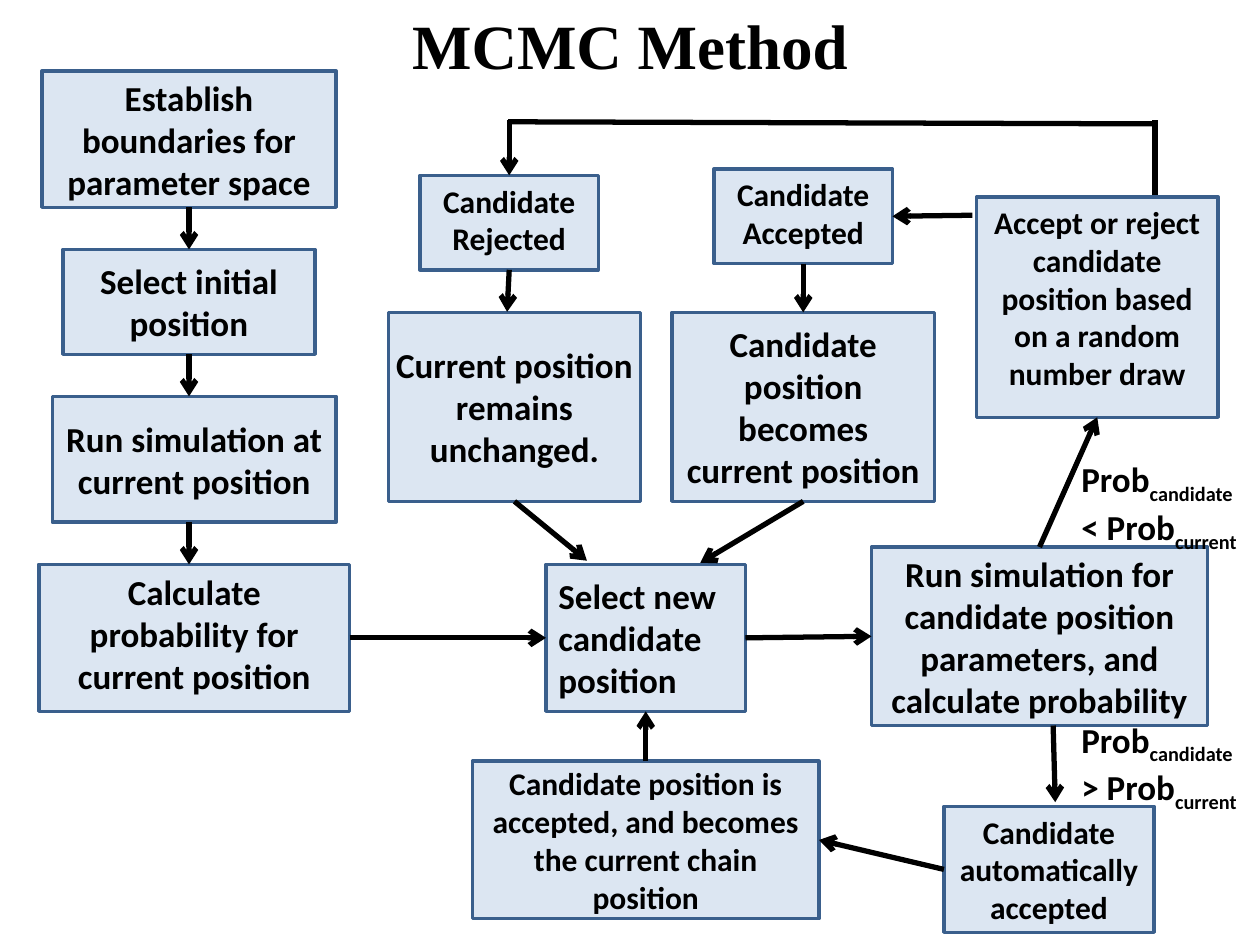
"""Builds the MCMC method flowchart slide on a grid of 120 columns by 90 rows."""
from pptx import Presentation
from pptx.dml.color import RGBColor
from pptx.enum.shapes import MSO_CONNECTOR as Line, MSO_SHAPE as Shape
from pptx.enum.text import MSO_ANCHOR as Anchor, MSO_AUTO_SIZE as AutoSize, PP_ALIGN as Align
from pptx.oxml.ns import qn
from pptx.util import Inches, Pt
from lxml.etree import SubElement

TOP, LEFT, BOTTOM, RIGHT = range(4)


def color(value):
    return RGBColor.from_string(value)


class Flowchart:
    fill, border, ink = "DCE6F2", "3A5F8C", "000000"
    body_font, title_font = "Calibri", "Times New Roman"

    def __init__(self, deck):
        self.slide = deck.slides.add_slide(deck.slide_layouts[5])
        self.column = deck.slide_width / 120
        self.row = deck.slide_height / 90

    def place(self, columns, rows):
        return round(columns * self.column), round(rows * self.row)

    def span(self, para, text, size, font=None, baseline=None):
        span = para.add_run()
        span.text = text
        span.font.name = font or self.body_font
        span.font.size = Pt(size)
        span.font.bold = True
        span.font.color.rgb = color(self.ink)
        if baseline is not None:
            span.font._element.set("baseline", str(baseline))

    def title(self, text, area):
        box = self.slide.shapes.title
        box.left, box.top = self.place(*area[:2])
        box.width, box.height = self.place(*area[2:])
        frame = box.text_frame
        frame.vertical_anchor = Anchor.TOP
        frame.auto_size = AutoSize.NONE
        para = frame.paragraphs[0]
        para.alignment = Align.CENTER
        self.span(para, text, 36, self.title_font)

    def step(self, text, area, size=20, anchor=Anchor.MIDDLE, align=Align.CENTER, inset=None):
        box = self.slide.shapes.add_shape(Shape.RECTANGLE, *self.place(*area[:2]), *self.place(*area[2:]))
        box.shadow.inherit = False
        box.fill.solid()
        box.fill.fore_color.rgb = color(self.fill)
        box.line.color.rgb = color(self.border)
        box.line.width = Pt(2)
        frame = box.text_frame
        frame.word_wrap = True
        frame.vertical_anchor = anchor
        if inset is not None:
            frame.margin_left = frame.margin_right = Inches(inset)
            frame.margin_top = frame.margin_bottom = Inches(inset)
        para = frame.paragraphs[0]
        para.alignment = align
        self.span(para, text, size)
        return box

    def arrow(self, start, end, head=True):
        start_glued, end_glued = (not isinstance(point[0], (int, float)) for point in (start, end))
        begin = (0, 0) if start_glued else self.place(*start)
        finish = (0, 0) if end_glued else self.place(*end)
        link = self.slide.shapes.add_connector(Line.STRAIGHT, *begin, *finish)
        if start_glued:
            link.begin_connect(*start)
        if end_glued:
            link.end_connect(*end)
        link.line.color.rgb = color(self.ink)
        link.line.width = Pt(3)
        if head:
            SubElement(link.line._get_or_add_ln(), qn("a:tailEnd"), type="arrow")
        SubElement(link._element.spPr, qn("a:effectLst"))

    def condition(self, sign, area):
        box = self.slide.shapes.add_textbox(*self.place(*area[:2]), *self.place(*area[2:]))
        frame = box.text_frame
        frame.word_wrap = True
        lines = (("Prob", "candidate"), (f"{sign} Prob", "current"))
        for index, (base, subscript) in enumerate(lines):
            para = frame.add_paragraph() if index else frame.paragraphs[0]
            self.span(para, base, 20)
            self.span(para, subscript, 20, baseline=-25000)


def main():
    deck = Presentation()
    deck.slide_width, deck.slide_height = Inches(10), Inches(7.5)
    chart = Flowchart(deck)
    step, arrow = chart.step, chart.arrow
    chart.title("MCMC Method", (6, 0, 108, 8.5))

    bounds = step("Establish boundaries for parameter space", (4, 6.75, 28, 13))
    initial = step("Select initial position", (6, 23.75, 24, 10))
    step("Run simulation at current position", (5, 37.75, 27, 12))
    current = step("Calculate probability for current position", (3.7, 53.75, 29.6, 14), anchor=Anchor.TOP)
    select = step("Select new candidate position", (52, 53.75, 19, 14), align=Align.LEFT)
    simulate = step("Run simulation for candidate position parameters, and calculate probability",
                    (83, 52.1, 32, 17))
    draw = step("Accept or reject candidate position based on a random number draw",
                (93, 18.75, 23, 21), 18, Anchor.TOP)
    chain = step("Candidate position is accepted, and becomes the current chain position",
                 (45, 72.5, 33, 15), 18, inset=0.05)
    becomes = step("Candidate position becomes current position", (64, 29.75, 25, 18))
    unchanged = step("Current position remains unchanged.", (37, 29.75, 24, 18), inset=0)
    automatic = step("Candidate automatically accepted", (89.9, 76.8, 20, 12), 18, Anchor.TOP)
    accepted = step("Candidate Accepted", (68, 16.1, 17, 9), 18, Anchor.TOP)
    rejected = step("Candidate Rejected", (40, 16.7, 17, 9), 18, Anchor.TOP)

    arrow((bounds, BOTTOM), (initial, TOP))
    arrow((initial, BOTTOM), (18, 37.75))
    arrow((18, 49.75), (18, 53.75))
    arrow((current, RIGHT), (select, LEFT))
    arrow((select, RIGHT), (simulate, LEFT))
    arrow((simulate, TOP), (draw, BOTTOM))
    arrow((110, 18.6), (110, 11.4), head=False)
    arrow((110, 11.8), (48.4, 11.6), head=False)
    arrow((48.5, 11.4), (rejected, TOP))
    arrow((92.6, 20.5), (accepted, RIGHT))
    arrow((rejected, BOTTOM), (48.3, 29.7))
    arrow((accepted, BOTTOM), (becomes, TOP))
    arrow((unchanged, BOTTOM), (55.9, 53.4))
    arrow((becomes, BOTTOM), (66.7, 53.6))
    arrow((100.3, 69.1), (100.5, 76.4))
    arrow((automatic, LEFT), (chain, RIGHT))
    arrow((chain, TOP), (select, BOTTOM))

    for sign, top in (("<", 43), (">", 67.8)):
        chart.condition(sign, (101.8, top, 18.2, 9.2))
    deck.save("out.pptx")


if __name__ == "__main__":
    main()
